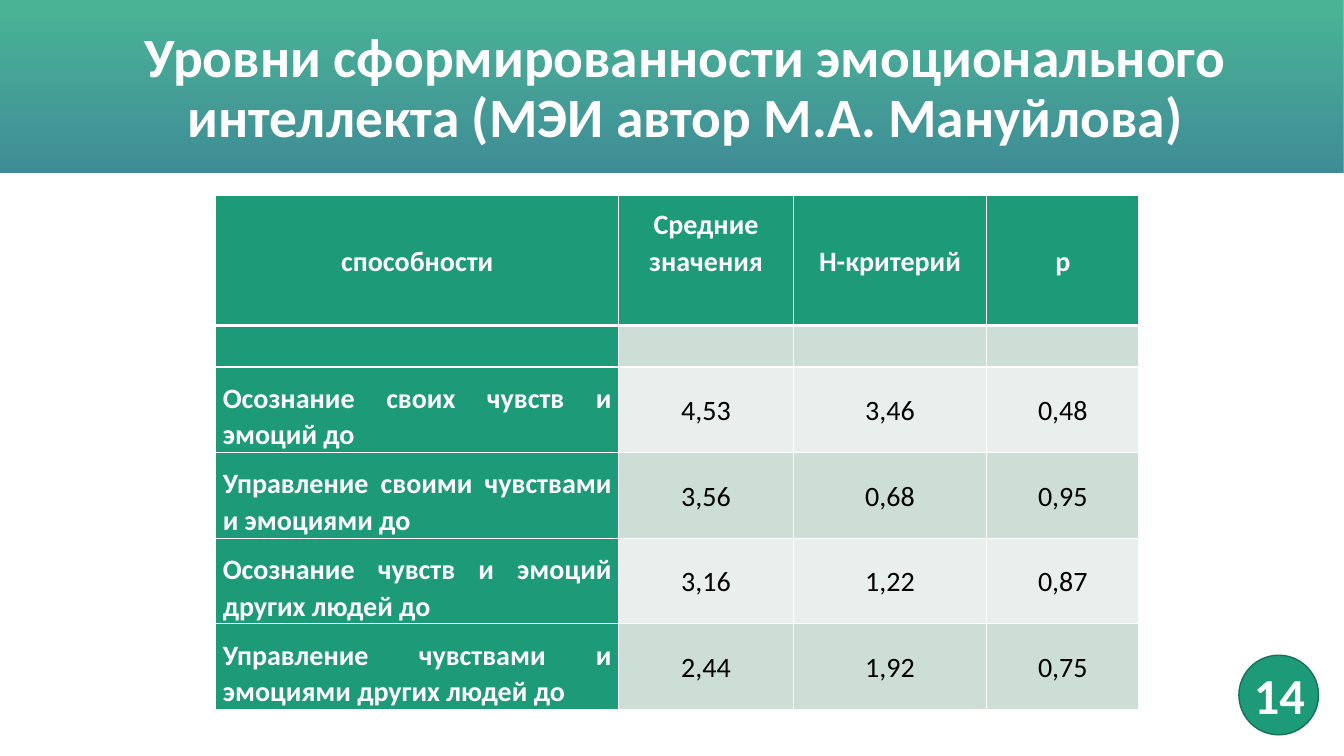
"""Build the slide on levels of emotional intelligence."""
import dataclasses
import typing

import lxml.etree
import pptx
import pptx.dml.color
import pptx.enum.shapes
import pptx.enum.text
import pptx.oxml.ns
import pptx.util

ALIGN = pptx.enum.text.PP_ALIGN
ANCHOR = pptx.enum.text.MSO_ANCHOR
SHAPE = pptx.enum.shapes.MSO_SHAPE
SLIDE_WIDTH = pptx.util.Inches(13.333)
SLIDE_HEIGHT = pptx.util.Inches(7.5)


@dataclasses.dataclass(frozen=True)
class Theme:
    font: str = "Calibri"
    white: str = "FFFFFF"
    black: str = "000000"
    green: str = "1D9A78"
    outline: str = "157259"
    bands: tuple[str, str] = ("CDDED6", "E8EFEC")
    gradient: tuple[tuple[float, str], ...] = ((0, "12707E"), (0.93, "1FA27E"))
    opacity: int = 80
    title_size: float = 39.6
    number_size: float = 36
    table_size: float = 20
    thin: float = 1
    thick: float = 3


@dataclasses.dataclass(frozen=True)
class Place:
    """Position and size in percent of the slide."""
    left: float
    top: float
    width: float
    height: float

    def box(self) -> tuple[int, int, int, int]:
        return across(self.left), down(self.top), across(self.width), down(self.height)


@dataclasses.dataclass(frozen=True)
class Label:
    text: str
    place: Place
    size: float
    frame: dict[str, typing.Any]
    paragraph: dict[str, typing.Any]


@dataclasses.dataclass(frozen=True)
class CellStyle:
    fill: str
    color: str
    bold: bool
    alignment: typing.Any
    anchor: typing.Any
    bottom: float = 0


THEME = Theme()
BAND = Place(0, 0, 100, 22.8)
BADGE = Place(92.18, 86.67, 5.93, 10.53)
TABLE = Place(16.05, 25.87, 68.7, 68)
COLUMNS = (30, 12.98, 14.4, 11.32)
ROWS = (17.2, 5.47) + (11.33,) * 4
CELL_INSET = 0.53
BLANK_LINE = 4.85

CELLS = (
    ("способности", "Средние значения", "H-критерий", "р"),
    ("", "", "", ""),
    ("Осознание своих чувств и эмоций до", "4,53", "3,46", "0,48"),
    ("Управление своими чувствами и эмоциями до", "3,56", "0,68", "0,95"),
    ("Осознание чувств и эмоций других людей до", "3,16", "1,22", "0,87"),
    ("Управление чувствами и эмоциями других людей до", "2,44", "1,92", "0,75"),
)


def across(percent: float) -> int:
    return round(SLIDE_WIDTH * percent / 100)


def down(percent: float) -> int:
    return round(SLIDE_HEIGHT * percent / 100)


LABELS = (
    Label("Уровни сформированности эмоционального интеллекта (МЭИ автор М.А. Мануйлова)",
          Place(5.4, 6.13, 91.2, 19.33), THEME.title_size,
          {"word_wrap": True, "vertical_anchor": ANCHOR.MIDDLE, "margin_bottom": down(8.6)},
          {"alignment": ALIGN.CENTER, "line_spacing": 0.9}),
    Label("14", Place(92.55, 87.2, 5.93, 9.47), THEME.number_size,
          {"word_wrap": True, "auto_size": pptx.enum.text.MSO_AUTO_SIZE.SHAPE_TO_FIT_TEXT},
          {"alignment": ALIGN.LEFT}),
)


def rgb(value: str) -> pptx.dml.color.RGBColor:
    return pptx.dml.color.RGBColor.from_string(value)


def apply(target: typing.Any, values: dict[str, typing.Any]) -> None:
    for name, value in values.items():
        setattr(target, name, value)


def write(paragraph: typing.Any, text: str, size: float, color: str, bold: bool,
          values: dict[str, typing.Any]) -> None:
    run = paragraph.add_run()
    run.text = text
    apply(paragraph, values)
    apply(run.font, {"name": THEME.font, "size": pptx.util.Pt(size), "bold": bold})
    run.font.color.rgb = rgb(color)


def add_band(slide: typing.Any) -> None:
    shape = slide.shapes.add_shape(SHAPE.RECTANGLE, *BAND.box())
    shape.shadow.inherit = False
    shape.line.fill.background()
    shape.fill.gradient()
    shape.fill.gradient_angle = 90
    for stop, (position, color) in zip(shape.fill.gradient_stops, THEME.gradient):
        stop.position = position
        stop.color.rgb = rgb(color)
    for color in shape.element.spPr.iter(pptx.oxml.ns.qn("a:srgbClr")):
        lxml.etree.SubElement(color, pptx.oxml.ns.qn("a:alpha"), val=str(THEME.opacity * 1000))


def add_badge(slide: typing.Any) -> None:
    shape = slide.shapes.add_shape(SHAPE.OVAL, *BADGE.box())
    shape.shadow.inherit = False
    shape.fill.solid()
    shape.fill.fore_color.rgb = rgb(THEME.green)
    shape.line.color.rgb = rgb(THEME.outline)
    shape.line.width = pptx.util.Pt(THEME.thin)


def add_label(slide: typing.Any, label: Label) -> None:
    frame = slide.shapes.add_textbox(*label.place.box()).text_frame
    apply(frame, label.frame)
    write(frame.paragraphs[0], label.text, label.size, THEME.white, True, label.paragraph)


def cell_style(row: int, column: int) -> CellStyle:
    if row == 0:
        bottom = BLANK_LINE if column == 1 else 0
        return CellStyle(THEME.green, THEME.white, True, ALIGN.CENTER, ANCHOR.MIDDLE, bottom)
    if column == 0:
        return CellStyle(THEME.green, THEME.white, True, ALIGN.JUSTIFY, ANCHOR.BOTTOM)
    band = THEME.bands[(row - 1) % 2]
    return CellStyle(band, THEME.black, False, ALIGN.CENTER, ANCHOR.MIDDLE)


def add_borders(cell: typing.Any, row: int) -> None:
    properties = cell._tc.get_or_add_tcPr()
    thick_side = {0: "lnB", 1: "lnT"}.get(row)
    for index, side in enumerate(("lnL", "lnR", "lnT", "lnB")):
        points = THEME.thick if side == thick_side else THEME.thin
        line = lxml.etree.Element(pptx.oxml.ns.qn(f"a:{side}"), w=str(pptx.util.Pt(points)))
        fill = lxml.etree.SubElement(line, pptx.oxml.ns.qn("a:solidFill"))
        lxml.etree.SubElement(fill, pptx.oxml.ns.qn("a:srgbClr"), val=THEME.white)
        properties.insert(index, line)


def fill_cell(cell: typing.Any, text: str, row: int, column: int) -> None:
    style = cell_style(row, column)
    apply(cell, {"vertical_anchor": style.anchor, "margin_top": 0,
                 "margin_bottom": down(style.bottom),
                 "margin_left": across(CELL_INSET), "margin_right": across(CELL_INSET)})
    cell.fill.solid()
    cell.fill.fore_color.rgb = rgb(style.fill)
    add_borders(cell, row)
    if text:
        write(cell.text_frame.paragraphs[0], text, THEME.table_size, style.color, style.bold,
              {"alignment": style.alignment, "line_spacing": 1.07})


def add_table(slide: typing.Any) -> None:
    table = slide.shapes.add_table(len(ROWS), len(COLUMNS), *TABLE.box()).table
    for column, width in zip(table.columns, COLUMNS):
        column.width = across(width)
    for row, height in zip(table.rows, ROWS):
        row.height = down(height)
    for row, texts in enumerate(CELLS):
        for column, text in enumerate(texts):
            fill_cell(table.cell(row, column), text, row, column)


def main() -> None:
    presentation = pptx.Presentation()
    apply(presentation, {"slide_width": SLIDE_WIDTH, "slide_height": SLIDE_HEIGHT})
    slide = presentation.slides.add_slide(presentation.slide_layouts[6])
    add_band(slide)
    add_badge(slide)
    for label in LABELS:
        add_label(slide, label)
    add_table(slide)
    presentation.save("out.pptx")


if __name__ == "__main__":
    main()
